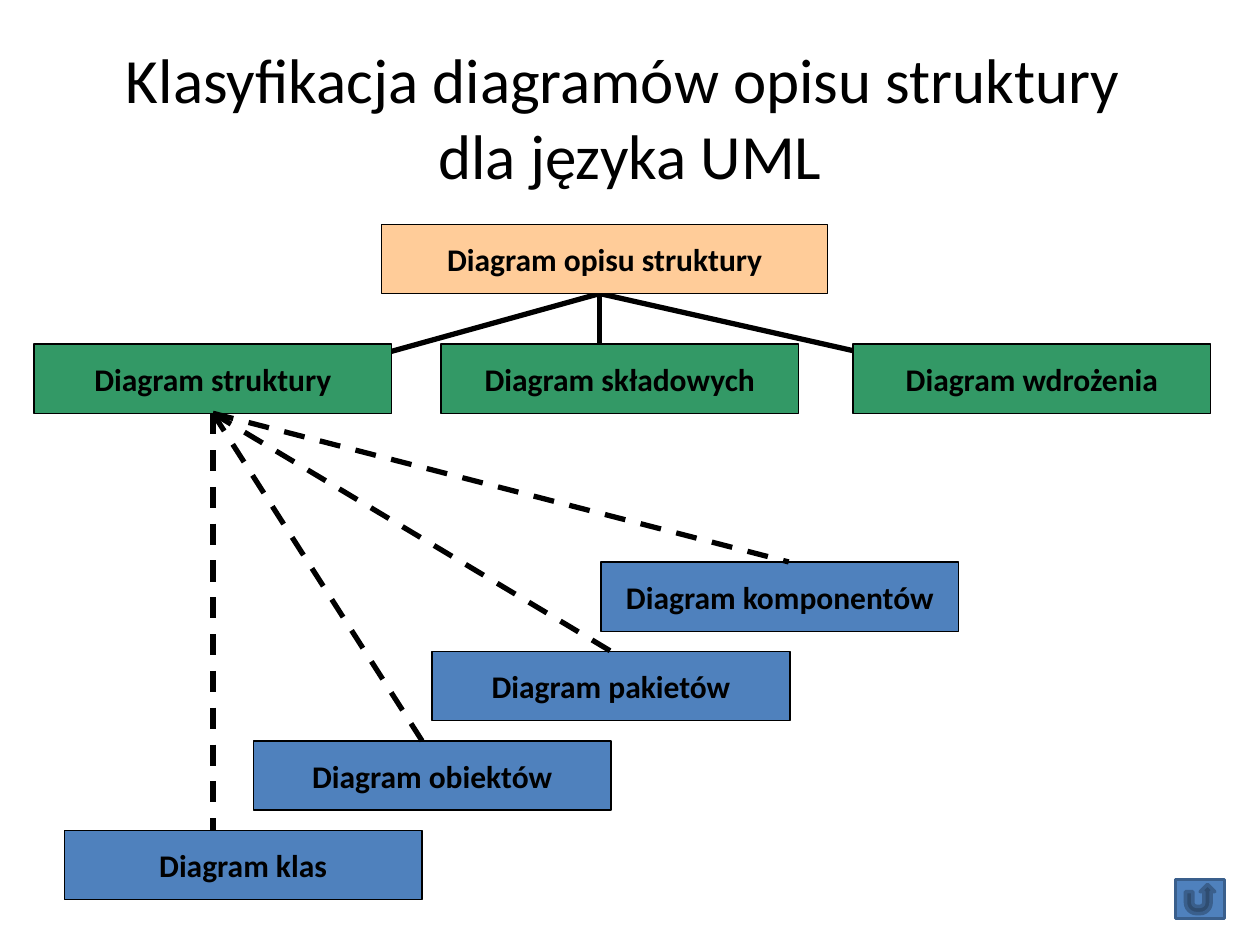
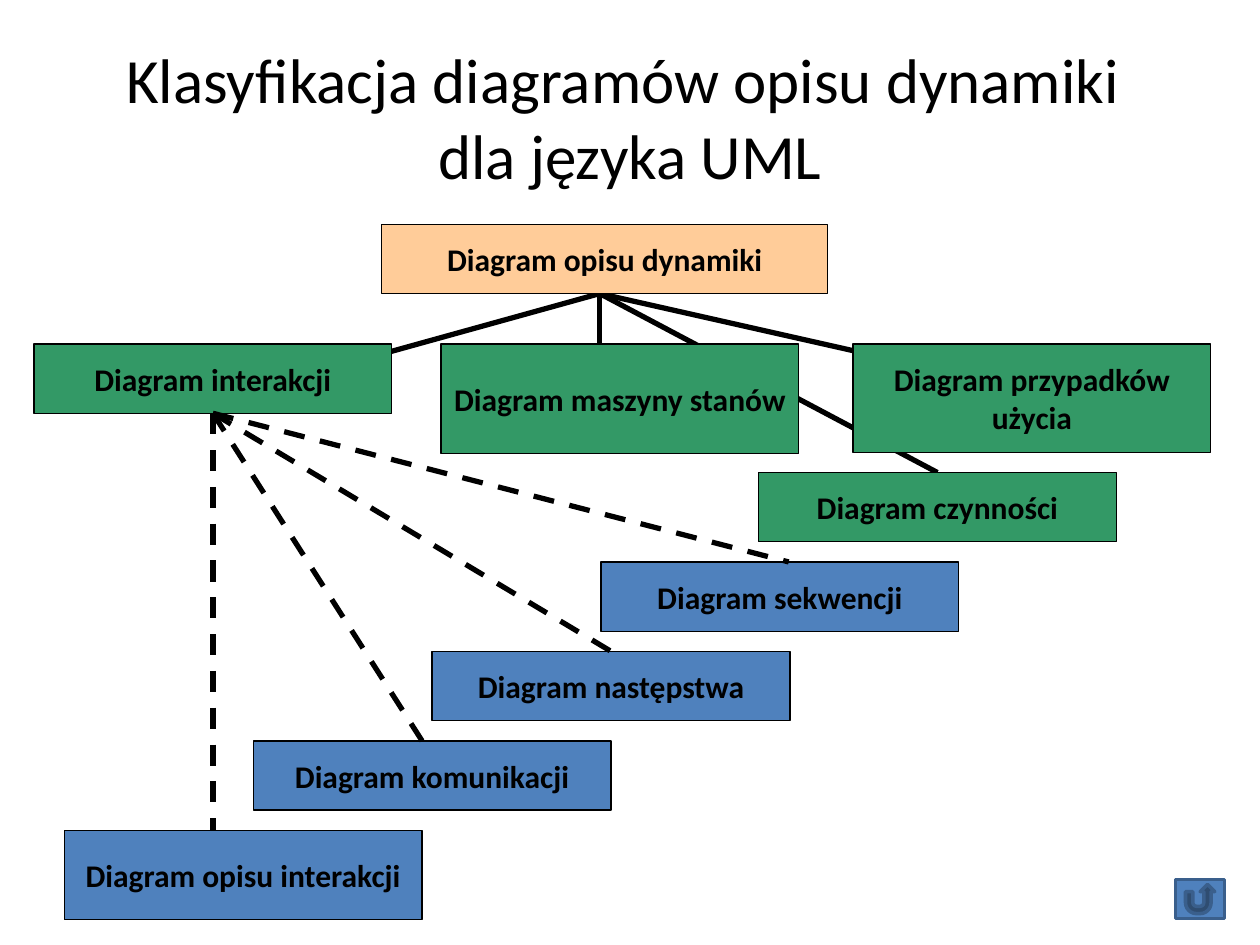
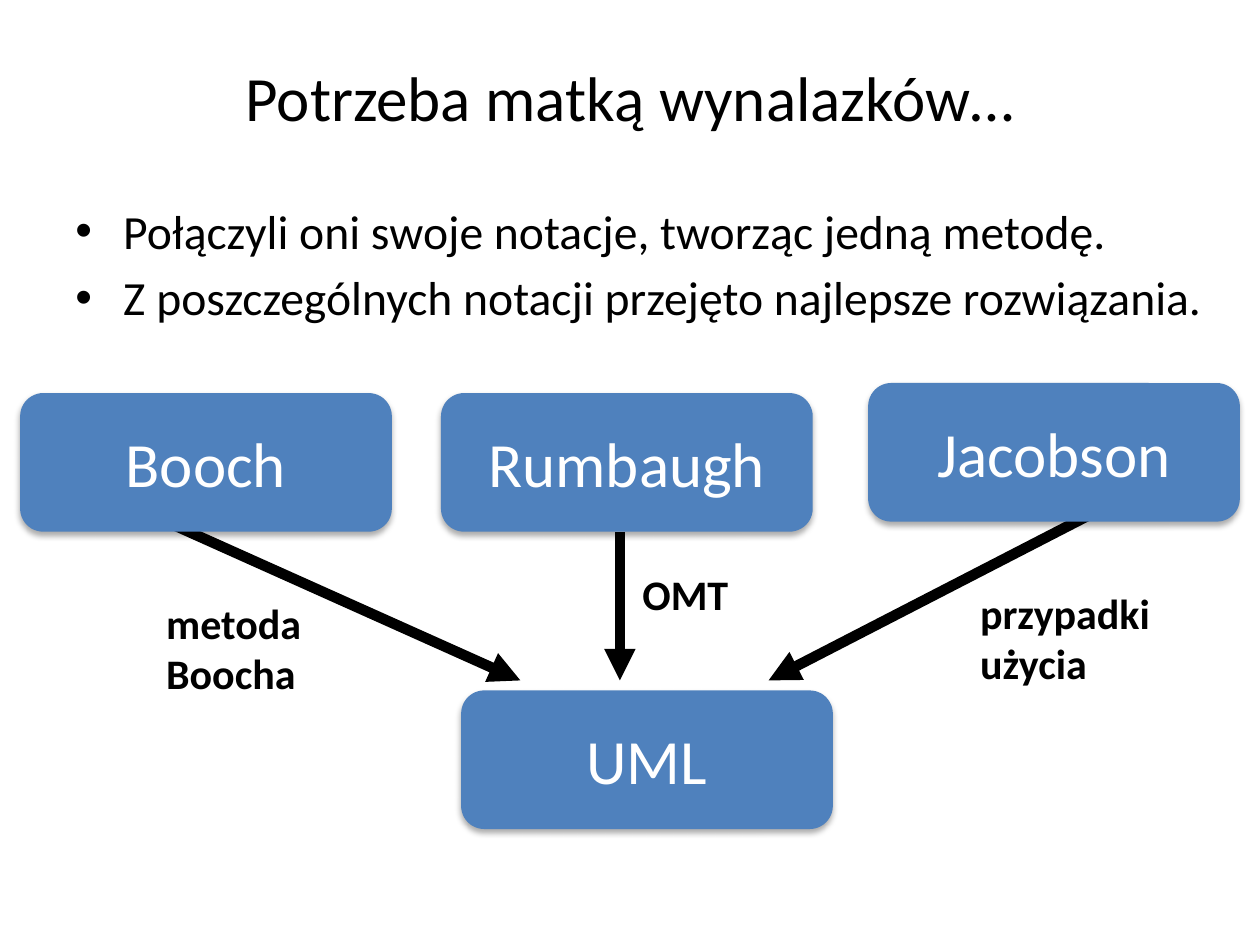
"""Builds three slides on UML: two diagram classifications and the origin of the notation."""
import pptx
import pptx.dml.color
import pptx.enum.dml
import pptx.enum.shapes
import pptx.enum.text
import pptx.oxml
import pptx.oxml.ns
import pptx.util

Inches, Pt = pptx.util.Inches, pptx.util.Pt
SHAPE = pptx.enum.shapes.MSO_SHAPE
ALIGN = pptx.enum.text.PP_ALIGN
ANCHOR = pptx.enum.text.MSO_ANCHOR
FONT = "Calibri"
COLOURS = {"ink": "000000", "white": "FFFFFF", "root": "FFCC99", "branch": "339966",
           "leaf": "4F81BD", "button_edge": "3A5F8C"}
NS = pptx.oxml.ns.nsdecls("a")
TOP, BOTTOM = 0, 2

BOX_W, BOX_H = 2.84, 0.55
BRANCH_TOP = 2.73
BRANCH_LEFTS = [0.27, 3.5, 6.77]
LEAF_LEFTS = [0.51, 2.01, 3.43, 4.77]
LEAF_TOP, LEAF_STEP = 6.59, 0.71
ROOT_BOX = (3.03, 1.78, 3.54, BOX_H)
ROOT_JOINT = (4.76, 2.33)
BRANCH_ENDS = [(3.03, 2.81), (4.76, 2.96), (6.89, 2.81)]
LEAF_JOINTS = [1.69, 3.35, 4.84, 6.26]
CENTRED_LEAF = 2

CLASSIFICATIONS = [
    {"title": "Klasyfikacja diagramów opisu struktury \vdla języka UML",
     "root": "Diagram opisu struktury",
     "branches": [("Diagram struktury", BOX_H), ("Diagram składowych", BOX_H),
                  ("Diagram wdrożenia", BOX_H)],
     "leaves": [("Diagram klas", BOX_H), ("Diagram obiektów", BOX_H),
                ("Diagram pakietów", BOX_H), ("Diagram komponentów", BOX_H)],
     "extra": None},
    {"title": "Klasyfikacja diagramów opisu dynamiki \vdla języka UML",
     "root": "Diagram opisu dynamiki",
     "branches": [("Diagram interakcji", BOX_H), ("Diagram maszyny stanów", 0.87),
                  ("Diagram przypadków użycia", 0.86)],
     "leaves": [("Diagram opisu interakcji", 0.71), ("Diagram komunikacji", BOX_H),
                ("Diagram następstwa", BOX_H), ("Diagram sekwencji", BOX_H)],
     "extra": ("Diagram czynności", (6.02, 3.75, BOX_W, BOX_H))},
]

ORIGIN_TITLE = "Potrzeba matką wynalazków…"
ORIGIN_POINTS = ["Połączyli oni swoje notacje, tworząc jedną metodę.",
                 "Z poszczególnych notacji przejęto najlepsze rozwiązania."]
NOTATIONS = [("Booch", 0.16, 3.12), ("Rumbaugh", 3.5, 3.12),
             ("Jacobson", 6.89, 3.04), ("UML", 3.66, 5.48)]
CONTRIBUTIONS = [(["metoda", "Boocha"], (1.22, 4.69, 1.42, 0.9)),
                 (["OMT"], (5, 4.46, 0.94, 0.5)),
                 (["przypadki", "użycia"], (7.68, 4.61, 1.76, 0.9))]
ARROWS = [((1.14, 4.06), (4.13, 5.4)), ((4.92, 4.22), (4.92, 5.4)),
          ((8.7, 4.06), (6.1, 5.4))]


def colour(name):
    return pptx.dml.color.RGBColor.from_string(COLOURS[name])


def write(shape, lines, size=18, bold=False, ink="ink", align=ALIGN.CENTER,
          anchor=ANCHOR.MIDDLE, bullet=False):
    frame = shape.text_frame
    frame.word_wrap = True
    frame.vertical_anchor = anchor
    for index, line in enumerate(lines):
        paragraph = frame.add_paragraph() if index else frame.paragraphs[0]
        paragraph.text = line
        paragraph.alignment = align
        for run in paragraph.runs:
            run.font.name, run.font.size, run.font.bold = FONT, Pt(size), bold
            run.font.color.rgb = colour(ink)
        if bullet:
            paragraph.space_before = Pt(size * 0.2)
            properties = paragraph._p.get_or_add_pPr()
            properties.set("marL", str(Inches(0.38)))
            properties.set("indent", str(-Inches(0.38)))
            properties.append(pptx.oxml.parse_xml(f'<a:buFont {NS} typeface="Arial"/>'))
            properties.append(pptx.oxml.parse_xml(f'<a:buChar {NS} char="•"/>'))


def add_text(slide, place, lines, **style):
    write(slide.shapes.add_textbox(*map(Inches, place)), lines, **style)


def add_title(slide, title, height=1.25):
    add_text(slide, (0.5, 0.3, 9, height), [title], size=36)


def add_box(slide, place, fill, kind=SHAPE.RECTANGLE, edge="ink", edge_width=0.75):
    box = slide.shapes.add_shape(kind, *map(Inches, place))
    box.shadow.inherit = False
    box.fill.solid()
    box.fill.fore_color.rgb = colour(fill)
    if edge:
        box.line.color.rgb = colour(edge)
        box.line.width = Pt(edge_width)
    else:
        box.line.fill.background()
    return box


def add_diagram(slide, name, place, fill):
    box = add_box(slide, place, fill)
    write(box, [name], bold=True)
    return box


def add_link(slide, start, end, width=3, dashed=False, arrow=False):
    link = slide.shapes.add_connector(pptx.enum.shapes.MSO_CONNECTOR.STRAIGHT,
                                      *map(Inches, (*start, *end)))
    link.line.color.rgb = colour("ink")
    link.line.width = Pt(width)
    if dashed:
        link.line.dash_style = pptx.enum.dml.MSO_LINE.DASH
    if arrow:
        link.line._get_or_add_ln().append(
            pptx.oxml.parse_xml(f'<a:tailEnd {NS} type="triangle"/>'))
    link._element.spPr.append(pptx.oxml.parse_xml(f"<a:effectLst {NS}/>"))
    return link


def add_soft_shadow(box):
    effects = box._element.spPr.find(pptx.oxml.ns.qn("a:effectLst"))
    effects.append(pptx.oxml.parse_xml(
        f'<a:outerShdw {NS} blurRad="{Pt(3.5)}" dist="{Pt(2.2)}" dir="5400000" rotWithShape="0">'
        '<a:srgbClr val="000000"><a:alpha val="32000"/></a:srgbClr></a:outerShdw>'))


def build_classification(slide, content):
    add_title(slide, content["title"])
    for end in BRANCH_ENDS:
        add_link(slide, ROOT_JOINT, end)
    if content["extra"]:
        name, place = content["extra"]
        extra_link = add_link(slide, ROOT_JOINT, place[:2])
        extra_link.end_connect(add_diagram(slide, name, place, "branch"), TOP)
    add_diagram(slide, content["root"], ROOT_BOX, "root")
    branches = [add_diagram(slide, name, (left, BRANCH_TOP, BOX_W, height), "branch")
                for left, (name, height) in zip(BRANCH_LEFTS, content["branches"])]
    for index, (name, height) in enumerate(content["leaves"]):
        top = LEAF_TOP - index * LEAF_STEP
        leaf = add_diagram(slide, name, (LEAF_LEFTS[index], top, BOX_W, height), "leaf")
        link = add_link(slide, (LEAF_JOINTS[0], BRANCH_TOP + BOX_H),
                        (LEAF_JOINTS[index], top), dashed=True)
        link.begin_connect(branches[0], BOTTOM)
        if index == CENTRED_LEAF:
            link.end_connect(leaf, TOP)
    add_box(slide, (9.33, 6.98, 0.39, 0.31), "leaf", SHAPE.ACTION_BUTTON_RETURN,
            "button_edge", 2)


def build_origin(slide):
    add_title(slide, ORIGIN_TITLE, 0.93)
    add_text(slide, (0.5, 1.55, 9.3, 1.34), ORIGIN_POINTS, size=27.2,
             align=ALIGN.LEFT, anchor=ANCHOR.TOP, bullet=True)
    for start, end in ARROWS:
        add_link(slide, start, end, width=6, arrow=True)
    for lines, place in CONTRIBUTIONS:
        add_text(slide, place, lines, size=24, bold=True, align=ALIGN.LEFT,
                 anchor=ANCHOR.TOP)
    for name, left, top in NOTATIONS:
        box = add_box(slide, (left, top, 2.95, 1.1), "leaf", SHAPE.ROUNDED_RECTANGLE, None)
        add_soft_shadow(box)
        write(box, [name], size=36, ink="white")


def main():
    deck = pptx.Presentation()
    deck.slide_width, deck.slide_height = Inches(10), Inches(7.5)
    blank = deck.slide_layouts[6]
    for content in CLASSIFICATIONS:
        build_classification(deck.slides.add_slide(blank), content)
    build_origin(deck.slides.add_slide(blank))
    deck.save("out.pptx")


if __name__ == "__main__":
    main()
